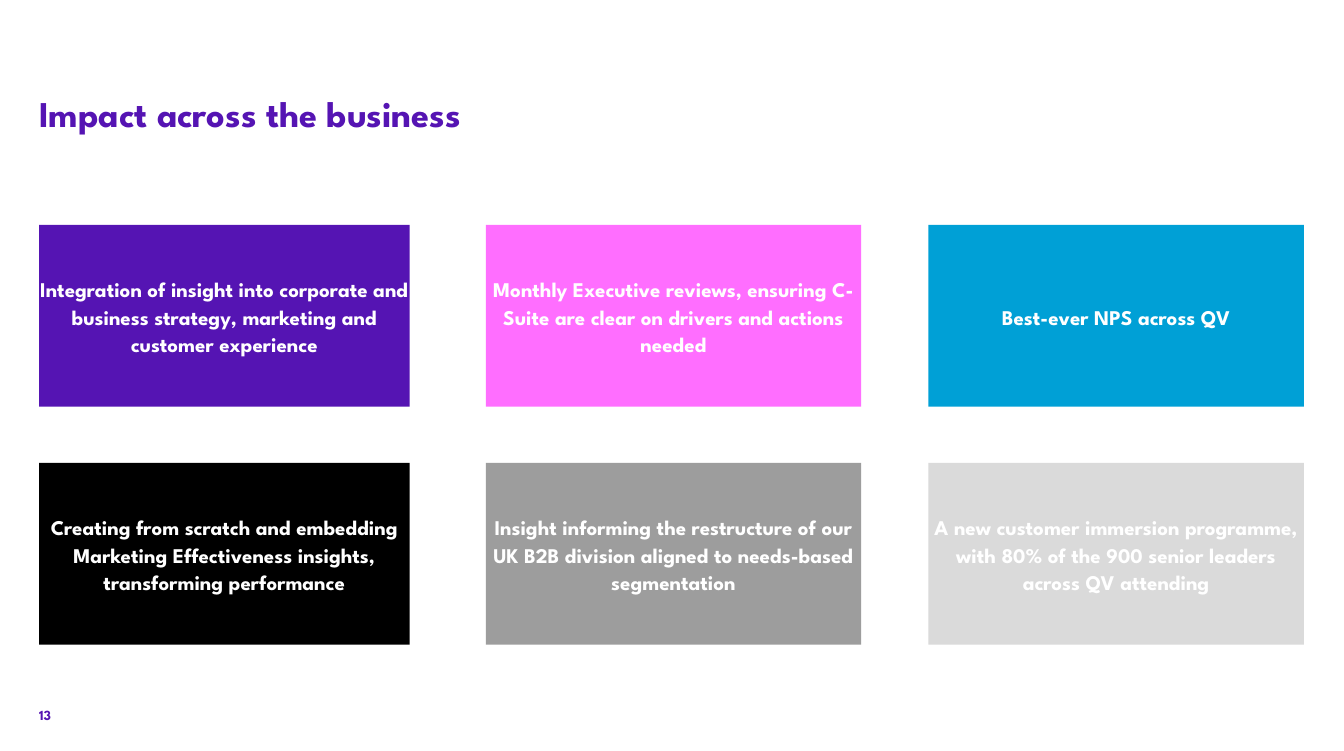
from dataclasses import dataclass

from pptx import Presentation
from pptx.dml.color import RGBColor
from pptx.enum.shapes import MSO_SHAPE
from pptx.enum.text import MSO_ANCHOR as Anchor, MSO_AUTO_SIZE as AutoSize, PP_ALIGN as Align
from pptx.util import Inches, Pt

# Content: one row of tiles per list, each tile is (text, fill)
TITLE = "Impact across the business"
PAGE_NUMBER = "13"
TILE_ROWS = [
    [
        ("Integration of insight into corporate and business strategy, "
         "marketing and customer experience", "5514B3"),
        ("Monthly Executive reviews, ensuring C-Suite are clear on drivers "
         "and actions needed", "FF6EFF"),
        ("Best-ever NPS across QV", "00A0D6"),
    ],
    [
        ("Creating from scratch and embedding Marketing Effectiveness insights, "
         "transforming performance", "000000"),
        ("Insight informing the restructure of our UK B2B division aligned to "
         "needs-based segmentation", "9D9D9D"),
        ("A new customer immersion programme, with 80% of the 900 senior leaders "
         "across QV attending", "DADADA"),
    ],
]


@dataclass(frozen=True)
class Theme:
    font: str = "League Spartan"
    accent: str = "5514B3"
    tile_text: str = "FFFFFF"
    title_size: int = 26
    tile_size: int = 15
    number_size: int = 10


THEME = Theme()

# Layout in inches
MARGIN = 0.39
COLUMNS = [(MARGIN, 3.69), (4.84, 3.74), (9.25, 3.74)]  # left, width
TILE_TOP, TILE_HEIGHT, ROW_STEP = 2.24, 1.81, 2.37


def write_text(shape, text, size, color, anchor=Anchor.TOP, align=Align.LEFT, spacing=1.0):
    frame = shape.text_frame
    frame.text = text
    frame.word_wrap = True
    frame.auto_size = AutoSize.NONE
    frame.vertical_anchor = anchor
    frame.margin_left = frame.margin_top = frame.margin_right = frame.margin_bottom = 0
    paragraph = frame.paragraphs[0]
    paragraph.alignment = align
    paragraph.line_spacing = spacing
    paragraph.space_before = Pt(0)
    font = paragraph.runs[0].font
    font.name = THEME.font
    font.size = Pt(size)
    font.bold = True
    font.color.rgb = RGBColor.from_string(color)


def add_tile(slide, box, text, fill):
    tile = slide.shapes.add_shape(MSO_SHAPE.RECTANGLE, *map(Inches, box))
    tile.shadow.inherit = False
    tile.fill.solid()
    tile.fill.fore_color.rgb = RGBColor.from_string(fill)
    tile.line.fill.background()
    write_text(tile, text, THEME.tile_size, THEME.tile_text,
               Anchor.MIDDLE, Align.CENTER, 1.1)


def main():
    presentation = Presentation()
    presentation.slide_width, presentation.slide_height = Inches(13.39), Inches(7.48)
    slide = presentation.slides.add_slide(presentation.slide_layouts[5])

    # Title
    title = slide.shapes.title
    title.left, title.top = Inches(MARGIN), Inches(0.91)
    title.width, title.height = Inches(12.6), Inches(0.87)
    write_text(title, TITLE, THEME.title_size, THEME.accent)

    # Tile grid
    for row, tiles in enumerate(TILE_ROWS):
        top = TILE_TOP + row * ROW_STEP
        for (left, width), (text, fill) in zip(COLUMNS, tiles):
            add_tile(slide, (left, top, width, TILE_HEIGHT), text, fill)

    # Page number
    number = slide.shapes.add_textbox(Inches(MARGIN), Inches(6.91), Inches(0.39), Inches(0.29))
    write_text(number, PAGE_NUMBER, THEME.number_size, THEME.accent, Anchor.BOTTOM)

    presentation.save("out.pptx")


if __name__ == "__main__":
    main()
